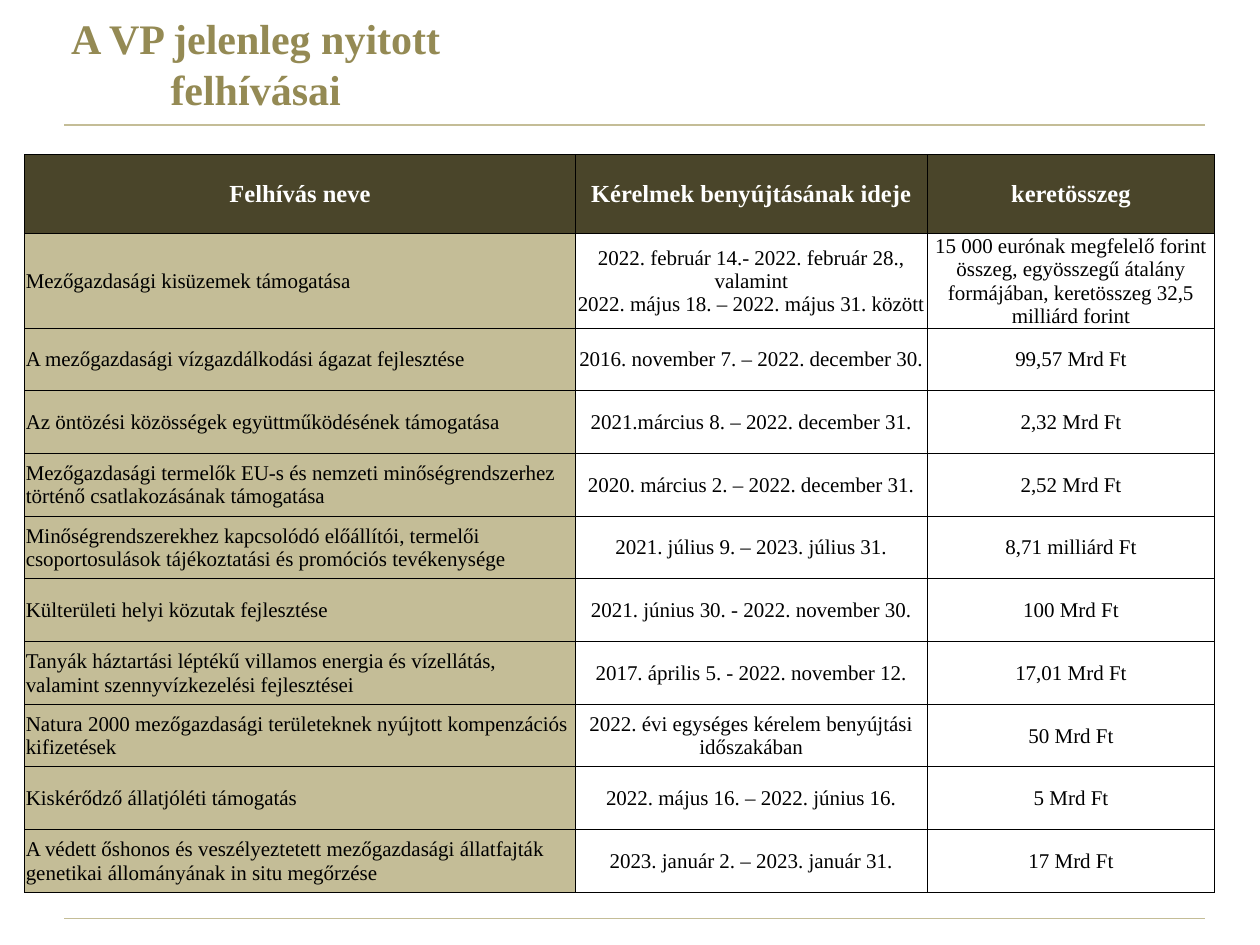
from dataclasses import dataclass

import lxml.etree
import pptx
import pptx.dml.color
import pptx.enum.shapes
import pptx.enum.text
import pptx.oxml.ns
import pptx.slide
import pptx.table
import pptx.text.text
import pptx.util

Cm = pptx.util.Cm
Pt = pptx.util.Pt
RGB = pptx.dml.color.RGBColor
Align = pptx.enum.text.PP_ALIGN
Anchor = pptx.enum.text.MSO_ANCHOR
qn = pptx.oxml.ns.qn


@dataclass(frozen=True)
class TextStyle:
    size: float
    color: str
    bold: bool = False


@dataclass(frozen=True)
class Theme:
    font: str = "Times New Roman"
    title: TextStyle = TextStyle(24, "948A54", True)
    header: TextStyle = TextStyle(14, "FFFFFF", True)
    body: TextStyle = TextStyle(12, "000000")
    header_fill: str = "4A452A"
    name_fill: str = "C4BD97"
    rule: str = "C4BD97"
    rule_width: float = 0.75
    border: str = "000000"
    border_width: float = 0.5


@dataclass(frozen=True)
class Call:
    name: str
    period: str
    budget: str


THEME = Theme()
TITLE = "A VP jelenleg nyitott felhívásai"
HEADINGS = Call("Felhívás neve", "Kérelmek benyújtásának ideje", "keretösszeg")
CALLS = [
    Call("Mezőgazdasági kisüzemek támogatása",
         "2022. február 14.- 2022. február 28., valamint\n"
         "2022. május 18. – 2022. május 31. között",
         "15 000 eurónak megfelelő forint összeg, egyösszegű átalány "
         "formájában, keretösszeg 32,5 milliárd forint"),
    Call("A mezőgazdasági vízgazdálkodási ágazat fejlesztése",
         "2016. november 7. – 2022. december 30.", "99,57 Mrd Ft"),
    Call("Az öntözési közösségek együttműködésének támogatása",
         "2021.március 8. – 2022. december 31.", "2,32 Mrd Ft"),
    Call("Mezőgazdasági termelők EU-s és nemzeti minőségrendszerhez "
         "történő csatlakozásának támogatása",
         "2020. március 2. – 2022. december 31.", "2,52 Mrd Ft"),
    Call("Minőségrendszerekhez kapcsolódó előállítói, termelői "
         "csoportosulások tájékoztatási és promóciós tevékenysége",
         "2021. július 9. – 2023. július 31.", "8,71 milliárd Ft"),
    Call("Külterületi helyi közutak fejlesztése",
         "2021. június 30. - 2022. november 30.", "100 Mrd Ft"),
    Call("Tanyák háztartási léptékű villamos energia és vízellátás, "
         "valamint szennyvízkezelési fejlesztései",
         "2017. április 5. - 2022. november 12.", "17,01 Mrd Ft"),
    Call("Natura 2000 mezőgazdasági területeknek nyújtott kompenzációs kifizetések",
         "2022. évi egységes kérelem benyújtási időszakában", "50 Mrd Ft"),
    Call("Kiskérődző állatjóléti támogatás",
         "2022. május 16. – 2022. június 16.", "5 Mrd Ft"),
    Call("A védett őshonos és veszélyeztetett mezőgazdasági állatfajták "
         "genetikai állományának in situ megőrzése",
         "2023. január 2. – 2023. január 31.", "17 Mrd Ft"),
]

COLUMN_WIDTHS = [Cm(11.1), Cm(7.09), Cm(5.8)]
HEADER_HEIGHT, FIRST_CALL_HEIGHT, CALL_HEIGHT = Cm(1.59), Cm(1.9), Cm(1.265)
CELL_INSET = Cm(0.02)


def write(frame: pptx.text.text.TextFrame, text: str, style: TextStyle,
          align: Align) -> None:
    frame.text = text
    for paragraph in frame.paragraphs:
        paragraph.alignment = align
        font = paragraph.font
        font.name = THEME.font
        font.size = Pt(style.size)
        font.bold = style.bold
        font.color.rgb = RGB.from_string(style.color)


def add_title(slide: pptx.slide.Slide) -> None:
    title = slide.shapes.title
    title.left, title.top, title.width, title.height = Cm(0), Cm(0.08), Cm(10.31), Cm(2.39)
    title.text_frame.vertical_anchor = Anchor.MIDDLE
    title.text_frame.auto_size = pptx.enum.text.MSO_AUTO_SIZE.NONE
    write(title.text_frame, TITLE, THEME.title, Align.CENTER)


def add_rule(slide: pptx.slide.Slide, y: int) -> None:
    rule = slide.shapes.add_connector(
        pptx.enum.shapes.MSO_CONNECTOR.STRAIGHT, Cm(1.3), y, Cm(24.3), y)
    rule.line.color.rgb = RGB.from_string(THEME.rule)
    rule.line.width = Pt(THEME.rule_width)
    lxml.etree.SubElement(rule._element.spPr, qn("a:effectLst"))


def add_borders(cell: pptx.table._Cell) -> None:
    """Outline the cell; call before filling, as the schema puts borders first."""
    properties = cell._tc.get_or_add_tcPr()
    for side in ("lnL", "lnR", "lnT", "lnB"):
        border = lxml.etree.SubElement(
            properties, qn(f"a:{side}"), w=str(Pt(THEME.border_width)))
        fill = lxml.etree.SubElement(border, qn("a:solidFill"))
        lxml.etree.SubElement(fill, qn("a:srgbClr"), val=THEME.border)


def format_cell(cell: pptx.table._Cell, text: str, style: TextStyle,
                align: Align, fill: str | None) -> None:
    add_borders(cell)
    if fill:
        cell.fill.solid()
        cell.fill.fore_color.rgb = RGB.from_string(fill)
    else:
        cell.fill.background()
    cell.margin_left = cell.margin_top = cell.margin_right = CELL_INSET
    cell.margin_bottom = 0
    cell.vertical_anchor = Anchor.MIDDLE
    write(cell.text_frame, text, style, align)


def add_calls_table(slide: pptx.slide.Slide) -> None:
    heights = [HEADER_HEIGHT, FIRST_CALL_HEIGHT] + [CALL_HEIGHT] * (len(CALLS) - 1)
    table = slide.shapes.add_table(
        len(heights), len(COLUMN_WIDTHS), Cm(0.5), Cm(3.12),
        sum(COLUMN_WIDTHS), sum(heights)).table
    table.first_row = table.horz_banding = False
    for column, width in zip(table.columns, COLUMN_WIDTHS):
        column.width = width
    for row, height in zip(table.rows, heights):
        row.height = height

    for column, heading in enumerate((HEADINGS.name, HEADINGS.period, HEADINGS.budget)):
        format_cell(table.cell(0, column), heading, THEME.header,
                    Align.CENTER, THEME.header_fill)
    for row, call in enumerate(CALLS, start=1):
        format_cell(table.cell(row, 0), call.name, THEME.body, Align.LEFT, THEME.name_fill)
        format_cell(table.cell(row, 1), call.period, THEME.body, Align.CENTER, None)
        format_cell(table.cell(row, 2), call.budget, THEME.body, Align.CENTER, None)


def main() -> None:
    presentation = pptx.Presentation()
    presentation.slide_width, presentation.slide_height = Cm(25.4), Cm(19.05)
    slide = presentation.slides.add_slide(presentation.slide_layouts[5])
    for y in (Cm(18.52), Cm(2.52)):
        add_rule(slide, y)
    add_title(slide)
    add_calls_table(slide)
    presentation.save("out.pptx")


if __name__ == "__main__":
    main()
